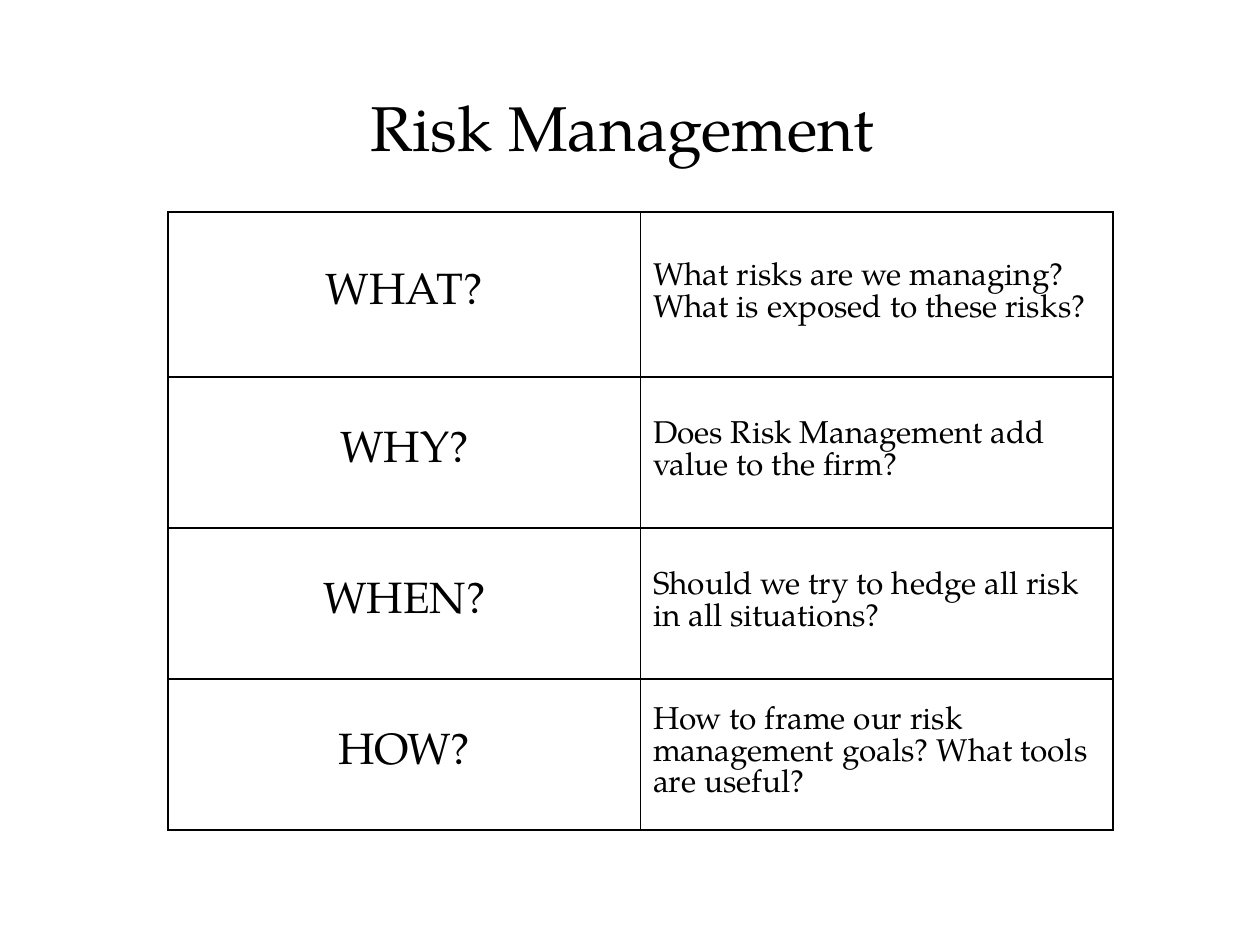
from pptx import Presentation
from pptx.dml.color import RGBColor
from pptx.enum.text import MSO_ANCHOR as Anchor, PP_ALIGN as Align
from pptx.oxml import parse_xml
from pptx.oxml.ns import nsdecls
from pptx.util import Emu, Pt

SCALE = 914400 / 126
FONT = "TeX Gyre Pagella"
INK = "000000"
PAPER = "FFFFFF"

ROWS = [
    ("WHAT?", "What risks are we managing? What is exposed to these risks?"),
    ("WHY?", "Does Risk Management add value to the firm?"),
    ("WHEN?", "Should we try to hedge all risk in all situations?"),
    ("HOW?", "How to frame our risk management goals? What tools are useful?"),
]
HEIGHTS = [165, 151, 151, 151]

# Paragraph and font formats of the two columns
STYLES = [
    ({"alignment": Align.CENTER}, {"size": Pt(25)}),
    ({"alignment": Align.LEFT, "line_spacing": Pt(18)}, {"size": Pt(18)}),
]


def px(num):
    return Emu(round(num * SCALE))


def paint(color, code):
    color.rgb = RGBColor.from_string(code)


def apply(item, values):
    for name, value in values.items():
        setattr(item, name, value)


def write(frame, text, para, font):
    frame.text = text
    line = frame.paragraphs[0]
    apply(line, para)
    face = line.runs[0].font
    apply(face, {"name": FONT, "bold": False, **font})
    paint(face.color, INK)


def edge(cell):
    # Borders come before the fill in the cell properties
    props = cell._tc.get_or_add_tcPr()
    for spot, side in enumerate(("lnL", "lnR", "lnT", "lnB")):
        props.insert(spot, parse_xml(
            f'<a:{side} {nsdecls("a")} w="{Pt(1)}"><a:solidFill>'
            f'<a:srgbClr val="{INK}"/></a:solidFill></a:{side}>'))


def add_title(slide, box):
    title = slide.shapes.title
    apply(title, dict(zip(("left", "top", "width", "height"), map(px, box))))
    frame = title.text_frame
    apply(frame, {"vertical_anchor": Anchor.MIDDLE, "word_wrap": True})
    write(frame, "Risk Management ", {"alignment": Align.CENTER}, {"size": Pt(36)})


def add_grid(slide, box):
    grid = slide.shapes.add_table(len(ROWS), len(STYLES), *map(px, box)).table
    apply(grid, {"first_row": False, "horz_banding": False})
    for col in grid.columns:
        col.width = px(box[2] / len(STYLES))
    for row, high, texts in zip(grid.rows, HEIGHTS, ROWS):
        row.height = px(high)
        for cell, text, style in zip(row.cells, texts, STYLES):
            cell.vertical_anchor = Anchor.MIDDLE
            cell.fill.solid()
            paint(cell.fill.fore_color, PAPER)
            edge(cell)
            write(cell.text_frame, text, *style)


def main():
    deck = Presentation()
    deck.slide_width, deck.slide_height = px(1260), px(945)
    slide = deck.slides.add_slide(deck.slide_layouts[5])
    back = slide.background.fill
    back.solid()
    paint(back.fore_color, PAPER)
    add_title(slide, (95, 63, 1071, 126))
    add_grid(slide, (168, 212, 945, sum(HEIGHTS)))
    deck.save("out.pptx")


if __name__ == "__main__":
    main()
